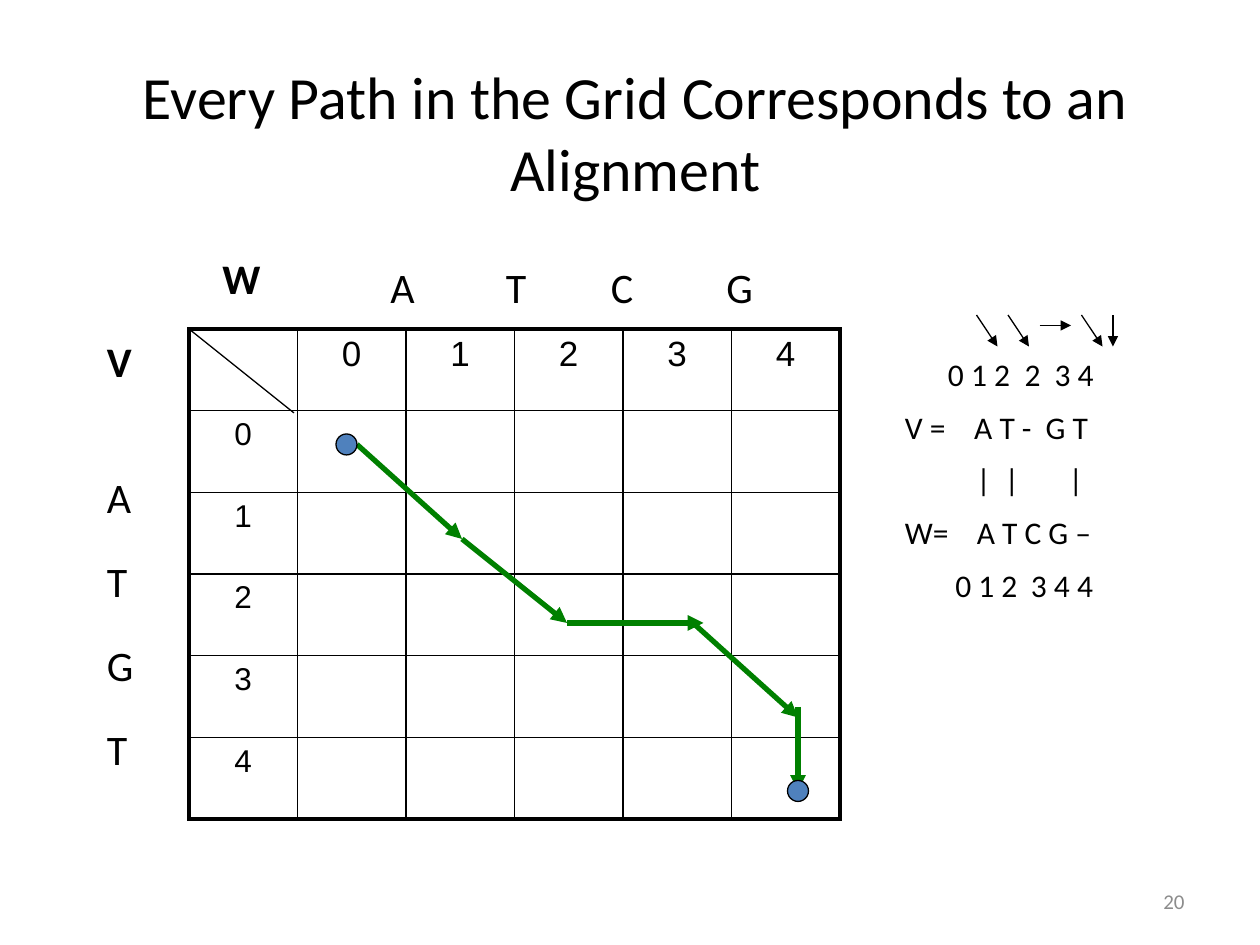
from dataclasses import dataclass

import lxml.etree
import pptx
import pptx.dml.color
import pptx.enum.shapes
import pptx.enum.text
import pptx.oxml.ns
import pptx.util

COLORS = {"ink": "000000", "path": "008000", "node": "4F81BD", "page": "8C8C8C"}
ALIGN = pptx.enum.text.PP_ALIGN
ANCHOR = pptx.enum.text.MSO_ANCHOR
GRID_COLUMNS, GRID_ROWS = 120, 90
TABLE_LEFT, TABLE_TOP = 18, 31.33
TABLE_WIDTH, TABLE_HEIGHT = 62, 46.67
TABLE_SIZE = 6
LABEL_WIDTH, LABEL_HEIGHT = 5, 6

deck = pptx.Presentation()
deck.slide_width = pptx.util.Inches(10)
deck.slide_height = pptx.util.Inches(7.5)
slide = deck.slides.add_slide(deck.slide_layouts[6])


@dataclass
class Label:
    text: str
    col: float
    row: float
    width: float = LABEL_WIDTH
    height: float = LABEL_HEIGHT
    size: float = 24
    bold: bool = False
    color: str = "ink"
    align: ALIGN = ALIGN.LEFT
    anchor: ANCHOR = ANCHOR.TOP


@dataclass
class Step:
    start: tuple[float, float]
    end: tuple[float, float]
    color: str = "ink"
    weight: float = 0.75
    arrow: bool = True


@dataclass
class AlignmentRow:
    symbols: list[str]
    stops: list[float]


def across(columns: float) -> int:
    return round(deck.slide_width * columns / GRID_COLUMNS)


def down(rows: float) -> int:
    return round(deck.slide_height * rows / GRID_ROWS)


def rgb(name: str) -> pptx.dml.color.RGBColor:
    return pptx.dml.color.RGBColor.from_string(COLORS[name])


def add_child(parent, tag: str, **attributes: str):
    return lxml.etree.SubElement(parent, pptx.oxml.ns.qn(tag), attributes)


def add_run(paragraph, text: str, size: float, color: str = "ink",
            font: str = "Calibri", bold: bool = False) -> None:
    run = paragraph.add_run()
    run.text = text
    run.font.name = font
    run.font.size = pptx.util.Pt(size)
    run.font.bold = bold
    run.font.color.rgb = rgb(color)


def add_frame(col: float, row: float, width: float, height: float):
    frame = slide.shapes.add_textbox(across(col), down(row), across(width), down(height)).text_frame
    frame.word_wrap = True
    return frame


def draw_label(label: Label) -> None:
    frame = add_frame(label.col, label.row, label.width, label.height)
    frame.vertical_anchor = label.anchor
    paragraph = frame.paragraphs[0]
    paragraph.alignment = label.align
    add_run(paragraph, label.text, label.size, label.color, bold=label.bold)


def draw_step(step: Step) -> None:
    line = slide.shapes.add_connector(
        pptx.enum.shapes.MSO_CONNECTOR.STRAIGHT,
        across(step.start[0]), down(step.start[1]), across(step.end[0]), down(step.end[1]))
    line.line.color.rgb = rgb(step.color)
    line.line.width = pptx.util.Pt(step.weight)
    properties = line._element.spPr
    if step.arrow:
        add_child(properties.find(pptx.oxml.ns.qn("a:ln")), "a:tailEnd", type="triangle")
    add_child(properties, "a:effectLst")


def draw_node(col: float, row: float) -> None:
    node = slide.shapes.add_shape(
        pptx.enum.shapes.MSO_SHAPE.OVAL, across(col), down(row), across(2), down(2))
    node.shadow.inherit = False
    node.fill.solid()
    node.fill.fore_color.rgb = rgb("node")
    node.line.color.rgb = rgb("ink")
    node.line.width = pptx.util.Pt(0.75)


def set_borders(cell, row: int, col: int) -> None:
    last = TABLE_SIZE - 1
    outer_sides = {"a:lnL": col == 0, "a:lnR": col == last, "a:lnT": row == 0, "a:lnB": row == last}
    properties = cell._tc.get_or_add_tcPr()
    for tag, outer in outer_sides.items():
        border = add_child(properties, tag, w=str(pptx.util.Pt(2.25 if outer else 1)))
        add_child(add_child(border, "a:solidFill"), "a:srgbClr", val=COLORS["ink"])


def draw_grid() -> None:
    grid = slide.shapes.add_table(
        TABLE_SIZE, TABLE_SIZE, across(TABLE_LEFT), down(TABLE_TOP),
        across(TABLE_WIDTH), down(TABLE_HEIGHT)).table
    grid.first_row = False
    grid.horz_banding = False
    for index in range(TABLE_SIZE):
        grid.columns[index].width = across(TABLE_WIDTH / TABLE_SIZE)
        grid.rows[index].height = down(TABLE_HEIGHT / TABLE_SIZE)
    for row in range(TABLE_SIZE):
        for col in range(TABLE_SIZE):
            cell = grid.cell(row, col)
            set_borders(cell, row, col)
            cell.fill.background()
            if (row == 0) != (col == 0):
                paragraph = cell.text_frame.paragraphs[0]
                paragraph.alignment = ALIGN.CENTER
                add_run(paragraph, str(row + col - 1), 20 if row == 0 else 18, font="Arial")


def draw_alignment(rows: list[AlignmentRow]) -> None:
    frame = add_frame(85, 33.2, 33, 26)
    for index, row in enumerate(rows):
        paragraph = frame.add_paragraph() if index else frame.paragraphs[0]
        paragraph.space_before = pptx.util.Pt(8.6)
        tabs = add_child(paragraph._p.get_or_add_pPr(), "a:tabLst")
        for stop in row.stops:
            add_child(tabs, "a:tab", pos=str(across(stop)), algn="l")
        add_run(paragraph, "\t".join(row.symbols), 18)


title = Label("Every Path in the Grid Corresponds to an Alignment", 6, 7, 109, 11, 34.2,
              align=ALIGN.CENTER, anchor=ANCHOR.MIDDLE)
page_number = Label("20", 86, 83.4, 28, 4.8, 12, color="page",
                    align=ALIGN.RIGHT, anchor=ANCHOR.MIDDLE)
sequence_names = [Label("W", 20, 23.5, 6.2, bold=True), Label("V", 9, TABLE_TOP, bold=True)]
w_letters = [Label(letter, col, TABLE_TOP - 7) for letter, col in zip("ATCG", (36, 47, 57, 68))]
v_letters = [Label(letter, 9, TABLE_TOP + 13 + 8 * index) for index, letter in enumerate("ATGT")]

corner_line = Step((TABLE_LEFT, TABLE_TOP), (28, TABLE_TOP + 8), arrow=False)
grid_path = [
    Step((x1, TABLE_TOP + y1), (x2, TABLE_TOP + y2), "path", 3)
    for x1, y1, x2, y2 in (
        (34, 11, 44, 20), (44, 20, 54, 28), (54, 28, 67, 28), (66, 28, 76, 37), (76, 36, 76, 44))
]
move_symbols = [Step((col, 30), (col + 2, 33)) for col in (93, 96, 103)]
move_symbols += [Step((99, 31), (102, 31)), Step((106, 30), (106, 33))]

alignment = [
    AlignmentRow(["", "0 1 2", "2", "3 4"], [4.1, 11.4, 14.25]),
    AlignmentRow(["V =", "A T -", "G T"], [6.6, 13.4]),
    AlignmentRow(["", "|", "|", "|"], [6.8, 9.5, 15.6]),
    AlignmentRow(["W=", "A T C G –"], [6.85]),
    AlignmentRow(["", "0 1 2", "3 4 4"], [4.8, 12]),
]

draw_grid()
for label in [title, *sequence_names, *w_letters, *v_letters, page_number]:
    draw_label(label)
draw_alignment(alignment)
for step in [corner_line, *grid_path, *move_symbols]:
    draw_step(step)
for node_col, node_row in ((32, 10), (75, 43)):
    draw_node(node_col, TABLE_TOP + node_row)

deck.save("out.pptx")
